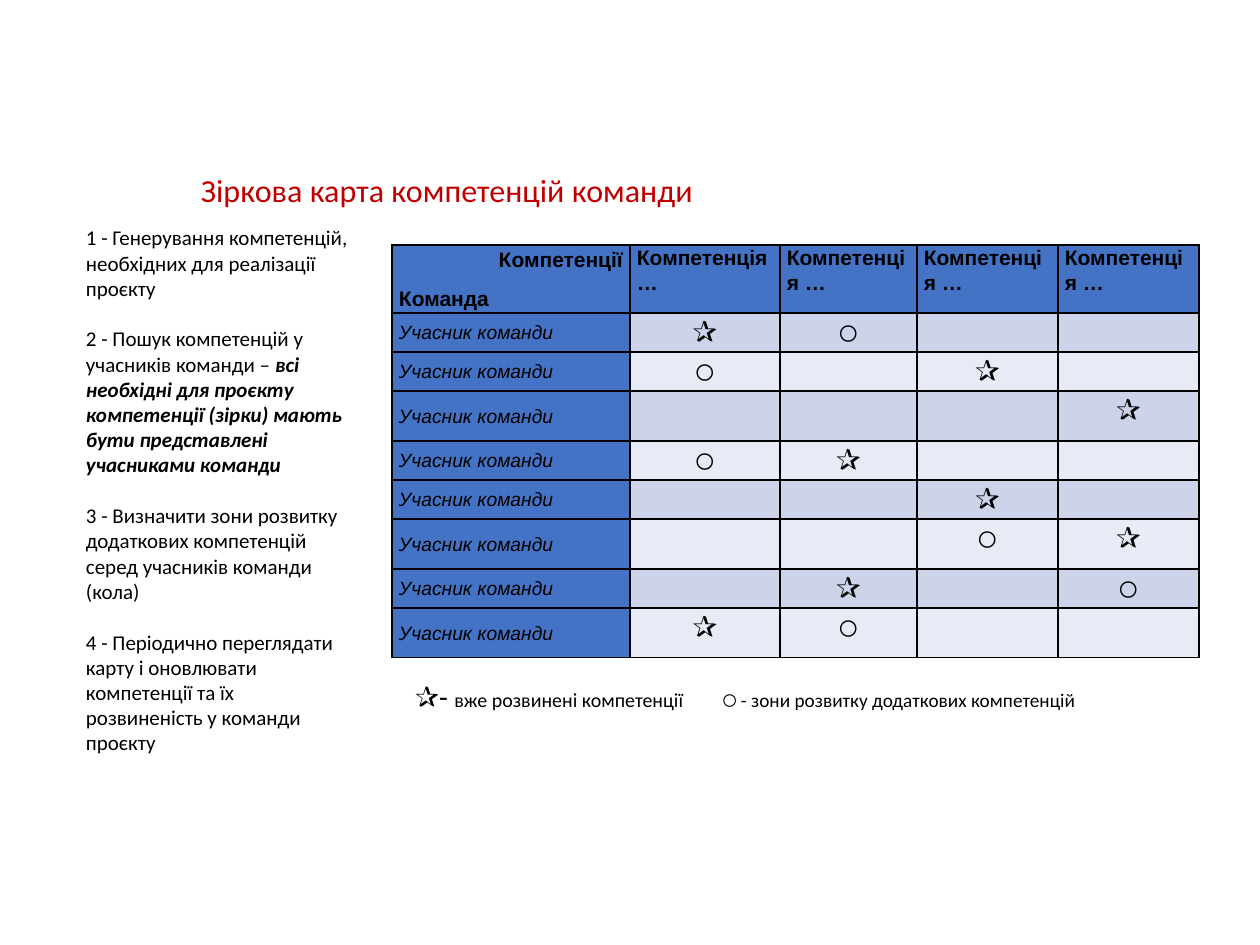
from lxml import etree
from pptx import Presentation
from pptx.dml.color import RGBColor
from pptx.enum.text import MSO_ANCHOR, PP_ALIGN
from pptx.oxml.ns import qn
from pptx.util import Pt

LEFT, CENTER, RIGHT = PP_ALIGN.LEFT, PP_ALIGN.CENTER, PP_ALIGN.RIGHT
TOP, MIDDLE = MSO_ANCHOR.TOP, MSO_ANCHOR.MIDDLE

BLACK = RGBColor(0x00, 0x00, 0x00)
RED = RGBColor(0xC0, 0x00, 0x00)
BLUE = RGBColor(0x44, 0x72, 0xC4)
BANDS = RGBColor(0xCD, 0xD4, 0xEA), RGBColor(0xE8, 0xEB, 0xF5)

# Content
TITLE = "Зіркова карта компетенцій команди"
STEPS = [
    [("1 - Генерування компетенцій, необхідних для реалізації проєкту", False)],
    [("2 - Пошук компетенцій у учасників команди – ", False),
     ("всі необхідні для проєкту компетенції (зірки) мають бути "
      "представлені учасниками команди", True)],
    [("3 - Визначити зони розвитку додаткових компетенцій серед "
      "учасників команди (кола)", False)],
    [("4 - Періодично переглядати карту і оновлювати компетенції та їх "
      "розвиненість у команди проєкту", False)],
]
SKILL = "Компетенція …"
MEMBER = "Учасник команди"
STAR, RING = "✰", "⚪"
MARKS = [
    (STAR, RING, "", ""),
    (RING, "", STAR, ""),
    ("", "", "", STAR),
    (RING, STAR, "", ""),
    ("", "", STAR, ""),
    ("", "", RING, STAR),
    ("", STAR, "", RING),
    (STAR, RING, "", ""),
]
LEGEND = [
    (STAR + "- ", 16.5),
    ("вже розвинені компетенції\t", 11.4),
    (RING, 13),
    (" - зони розвитку додаткових компетенцій", 11),
]

# Sizes in px
COLS = [238, 150, 137, 141, 141]
ROWS = [64, 39, 39, 50, 39, 39, 50, 39, 50]
TAB = 308


def px(n):
    return round(n * 914400 / 126)


def add_run(para, text, size, face="Calibri", color=BLACK, bold=False, italic=False):
    run = para.add_run()
    run.text = text
    font = run.font
    font.size, font.name, font.color.rgb = Pt(size), face, color
    font.bold, font.italic = bold, italic


def add_box(slide, x, y, w, h, pads):
    frame = slide.shapes.add_textbox(px(x), px(y), px(w), px(h)).text_frame
    frame.word_wrap = True
    frame.vertical_anchor = MIDDLE
    frame.margin_left = frame.margin_right = px(pads[0])
    frame.margin_top, frame.margin_bottom = px(pads[1]), px(pads[2])
    return frame


def add_border(cell):
    props = cell._tc.get_or_add_tcPr()
    for at, side in enumerate(("lnL", "lnR", "lnT", "lnB")):
        line = etree.Element(qn("a:" + side), w=str(Pt(1)))
        fill = etree.SubElement(line, qn("a:solidFill"))
        etree.SubElement(fill, qn("a:srgbClr"), val=str(BLACK))
        props.insert(at, line)


def fill_cell(cell, lines, color, size, anchor=TOP, bold=False, italic=False):
    cell.margin_left = cell.margin_right = px(7)
    cell.margin_top = cell.margin_bottom = 0
    cell.vertical_anchor = anchor
    cell.fill.solid()
    cell.fill.fore_color.rgb = color
    add_border(cell)
    frame = cell.text_frame
    for i, (text, align) in enumerate(lines):
        para = frame.add_paragraph() if i else frame.paragraphs[0]
        para.alignment, para.line_spacing = align, 1.07
        if i:
            para.space_before = Pt(8)
        add_run(para, text, size, "Arial", bold=bold, italic=italic)


def add_steps(slide):
    frame = add_box(slide, 73, 234, 291, 512, (13, 6, 6))
    for i, step in enumerate(STEPS):
        para = frame.add_paragraph() if i else frame.paragraphs[0]
        if i:
            para.space_before = Pt(14.6)
        for text, strong in step:
            add_run(para, text, 12, bold=strong, italic=strong)


def add_map(slide):
    frame = slide.shapes.add_table(len(ROWS), len(COLS), px(392), px(245),
                                   px(sum(COLS)), px(sum(ROWS)))
    table = frame.table
    for col, w in zip(table.columns, COLS):
        col.width = px(w)
    for row, h in zip(table.rows, ROWS):
        row.height = px(h)

    # Header row
    corner = [("Компетенції", RIGHT), ("Команда", LEFT)]
    fill_cell(table.cell(0, 0), corner, BLUE, 12, MIDDLE, bold=True)
    for c in range(1, len(COLS)):
        fill_cell(table.cell(0, c), [(SKILL, LEFT)], BLUE, 12, bold=True)

    # Member rows
    for r, marks in enumerate(MARKS, 1):
        fill_cell(table.cell(r, 0), [(MEMBER, LEFT)], BLUE, 11, MIDDLE, italic=True)
        for c, mark in enumerate(marks, 1):
            lines = [(mark, CENTER)] if mark else []
            fill_cell(table.cell(r, c), lines, BANDS[(r - 1) % 2], 17)


def add_title(slide):
    para = add_box(slide, 192, 159, 634, 59, (9, 5, 5)).paragraphs[0]
    para.line_spacing = 1.07
    add_run(para, TITLE, 18.3, color=RED)


def add_legend(slide):
    para = add_box(slide, 406, 679, 762, 67, (9, 5, 34)).paragraphs[0]
    para.line_spacing = 0.87
    tabs = etree.SubElement(para._p.get_or_add_pPr(), qn("a:tabLst"))
    etree.SubElement(tabs, qn("a:tab"), pos=str(px(TAB)), algn="l")
    for text, size in LEGEND:
        add_run(para, text, size)


def main():
    deck = Presentation()
    deck.slide_width, deck.slide_height = px(1260), px(945)
    slide = deck.slides.add_slide(deck.slide_layouts[6])
    add_steps(slide)
    add_map(slide)
    add_title(slide)
    add_legend(slide)
    deck.save("out.pptx")


if __name__ == "__main__":
    main()
